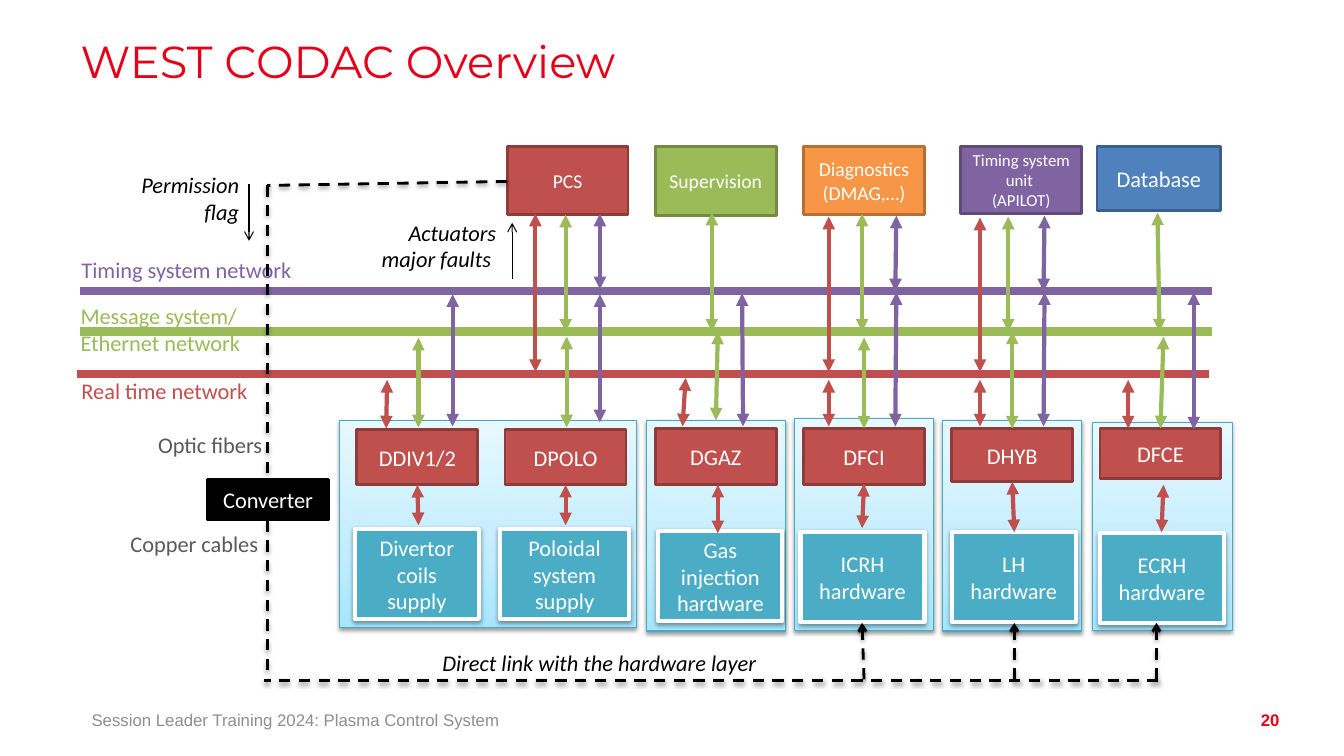
from copy import deepcopy

from pptx import Presentation
from pptx.dml.color import RGBColor
from pptx.enum.dml import MSO_LINE
from pptx.enum.shapes import MSO_CONNECTOR, MSO_SHAPE
from pptx.enum.text import MSO_ANCHOR, MSO_AUTO_SIZE, PP_ALIGN
from pptx.oxml import parse_xml
from pptx.oxml.ns import nsdecls, qn
from pptx.util import Inches, Pt

RECTANGLE, STRAIGHT = MSO_SHAPE.RECTANGLE, MSO_CONNECTOR.STRAIGHT
LEFT, CENTER, RIGHT, JUSTIFY = PP_ALIGN.LEFT, PP_ALIGN.CENTER, PP_ALIGN.RIGHT, PP_ALIGN.JUSTIFY
TOP, MIDDLE = MSO_ANCHOR.TOP, MSO_ANCHOR.MIDDLE
NO_FIT, DASH = MSO_AUTO_SIZE.NONE, MSO_LINE.DASH
TITLE_ONLY = 5

COLORS = {
    "title": "E50019", "footer": "8E8E8E", "medium": "595959",
    "black": "000000", "white": "FFFFFF",
    "realtime": "C0504D", "realtime_edge": "8E3B39",
    "message": "9BBB59", "message_edge": "738A42",
    "timing": "8064A2", "timing_edge": "5F4A78",
    "diagnostics": "F79646", "diagnostics_edge": "B76F34",
    "database": "4F81BD", "database_edge": "3A5F8C",
    "hardware": "4BACC6", "panel_edge": "46AAC5",
    "panel_low": "A7E6FF", "panel_mid": "C1EDFF", "panel_high": "E7F8FF",
}
PANEL_STOPS = [(0, "panel_low"), (0.35, "panel_mid"), (1, "panel_high")]

PANELS = [(6.41, 4.17, 1.38, 2.09), (10.84, 4.19, 1.38, 2.07), (9.35, 4.17, 1.38, 2.09),
          (7.88, 4.15, 1.38, 2.11), (3.37, 4.17, 2.94, 2.06)]
NETWORKS = [("message", 0.79, 3.29), ("realtime", 0.76, 3.71), ("timing", 0.79, 2.89)]
NETWORK_LABELS = [
    ("Message system/\nEthernet network", (0.7, 2.95, 1.95, 0.64), "message"),
    ("Timing system network", (0.71, 2.49, 3.4, 0.37), "timing"),
    ("Real time network", (0.71, 3.69, 1.95, 0.37), "realtime"),
]
CONTROLLERS = [("DDIV1/2", 3.54, 4.26, 0.55), ("DPOLO", 5.01, 4.26, 0.55),
               ("DGAZ", 6.5, 4.25, 0.56), ("DFCI", 7.97, 4.25, 0.56),
               ("DHYB", 9.44, 4.25, 0.53), ("DFCE", 10.91, 4.25, 0.5)]
SERVICES = [
    ("PCS", 5.03, 1.2, 0.68, "realtime", 14),
    ("Supervision", 6.5, 1.2, 0.69, "message", 14),
    ("Diagnostics\n(DMAG,…)", 7.97, 1.2, 0.68, "diagnostics", 14),
    ("Timing system unit \n(APILOT)", 9.53, 1.2, 0.67, "timing", 12),
    ("Database", 10.88, 1.23, 0.64, "database", 16),
]
HARDWARE = [
    ("Poloidal system supply", 4.96, 5.25, 1.28), ("Divertor coils supply", 3.52, 5.25, 1.23),
    ("ICRH\nhardware", 7.94, 5.28, 1.23), ("LH\nhardware", 9.44, 5.28, 1.23),
    ("Gas injection\nhardware", 6.53, 5.27, 1.23), ("ECRH\nhardware", 10.91, 5.29, 1.23),
]
# Each exchange: x at the bottom, bottom, top, and optional shift of x at the top.
EXCHANGES = {
    "timing": [
        (10.35, 2.89, 2.14, 0.01), (8.88, 2.89, 2.14, 0.01), (5.95, 2.87, 2.12),
        (11.84, 4.26, 2.9), (10.35, 4.23, 2.9, 0.01), (8.88, 4.23, 2.9, 0.01),
        (7.37, 4.23, 2.91, -0.01), (5.95, 4.19, 2.92), (4.49, 4.23, 2.92)],
    "message": [
        (7.06, 3.29, 2.11), (5.61, 3.29, 2.13), (8.55, 3.29, 2.12), (10, 3.29, 2.15),
        (11.5, 3.29, 2.11, -0.02), (11.51, 4.25, 3.34, 0.03), (10.04, 4.25, 3.29),
        (8.57, 4.25, 3.35), (7.1, 4.17, 3.29, 0.02), (5.62, 4.24, 3.34), (4.15, 4.24, 3.35)],
    "realtime": [
        (11.19, 4.25, 3.77), (9.72, 4.23, 3.77), (8.22, 4.23, 3.77),
        (6.77, 4.23, 3.75, 0.03), (3.83, 4.25, 3.77, 0.01),
        (5.31, 3.69, 2.12), (8.22, 3.69, 2.15), (9.72, 3.69, 2.16),
        (4.15, 5.21, 4.81, -0.01), (5.61, 5.21, 4.81), (8.55, 5.24, 4.8, 0.02),
        (10.06, 5.28, 4.78, -0.02), (7.12, 5.29, 4.81), (11.52, 5.28, 4.81, 0.02)],
}
DIRECT_LINKS = [((5.03, 1.8), (2.65, 1.84)), ((2.65, 1.84), (2.65, 6.74)),
                ((11.49, 6.75), (2.62, 6.75))]
HARDWARE_LINKS = [((8.57, 6.74), (8.55, 6.18)), ((10.06, 6.74), (10.06, 6.18)),
                  ((11.47, 6.74), (11.47, 6.18))]
SIGNALS = [((5.08, 2.77), (5.08, 2.21)), ((2.47, 1.83), (2.47, 2.39))]
NOTES = [
    ("Actuators major faults ", (3.47, 2.12, 1.55, 0.64), "black", RIGHT, True),
    ("Permission flag", (0.92, 1.65, 1.55, 0.64), "black", RIGHT, True),
    ("Direct link with the hardware layer", (4.29, 6.39, 3.5, 0.37), "black", JUSTIFY, True),
    ("Optic fibers", (1.15, 4.23, 1.55, 0.37), "medium", RIGHT, False),
    ("Copper cables", (1.11, 5.21, 1.55, 0.37), "medium", RIGHT, False),
]


def rgb(color):
    """Return the named colour."""
    return RGBColor.from_string(COLORS[color])


class DiagramSlide:
    """Hold the text style and the slide on which elements are drawn."""

    def __init__(self, deck, font="Calibri", size=16):
        self.slide = deck.slides.add_slide(deck.slide_layouts[TITLE_ONLY])
        self.shapes = self.slide.shapes
        self.style = {"name": font, "size": size, "bold": False, "italic": False}

    def set_text(self, frame, wording, color, align=LEFT, anchor=TOP, **changes):
        """Fill a text frame and format its runs."""
        frame.text = wording
        for key, value in {"word_wrap": True, "auto_size": NO_FIT, "vertical_anchor": anchor}.items():
            setattr(frame, key, value)
        style = {**self.style, **changes}
        style["size"] = Pt(style["size"])
        for paragraph in frame.paragraphs:
            paragraph.alignment = align
            for run in paragraph.runs:
                for key, value in style.items():
                    setattr(run.font, key, value)
                run.font.color.rgb = rgb(color)

    def title(self, wording, place):
        """Move and format the title placeholder."""
        heading = self.shapes.title
        for key, value in zip(("left", "top", "width", "height"), place):
            setattr(heading, key, Inches(value))
        self.set_text(heading.text_frame, wording, "title", name="Montserrat", size=32)
        heading.text_frame.margin_left = heading.text_frame.margin_right = 0
        heading.text_frame.paragraphs[0].line_spacing = 0.9

    def label(self, wording, place, color, **changes):
        """Add a text box."""
        box = self.shapes.add_textbox(*map(Inches, place))
        self.set_text(box.text_frame, wording, color, **changes)

    def cast_shadow(self, properties):
        """Put a soft shadow in the effect list."""
        properties.find(qn("a:effectLst")).append(parse_xml(
            f'<a:outerShdw {nsdecls("a")} blurRad="{Pt(3.1)}" dist="{Pt(1.6)}" dir="5400000" '
            'rotWithShape="0"><a:srgbClr val="000000"><a:alpha val="38000"/></a:srgbClr></a:outerShdw>'))

    def box(self, wording, place, fill, edge, width=2, shadow=False, size=16):
        """Add a rectangle with centred white text."""
        block = self.shapes.add_shape(RECTANGLE, *map(Inches, place))
        block.shadow.inherit = False
        block.line.color.rgb = rgb(edge)
        block.line.width = Pt(width)
        if fill:
            block.fill.solid()
            block.fill.fore_color.rgb = rgb(fill)
        if shadow:
            self.cast_shadow(block._element.spPr)
        if wording:
            self.set_text(block.text_frame, wording, "white", CENTER, MIDDLE, size=size)
        return block

    def panel(self, place):
        """Add a shaded rectangle behind a subsystem."""
        block = self.box("", place, None, "panel_edge", 0.75, shadow=True)
        block.fill.gradient()
        block.fill.gradient_angle = 90
        stops = block._element.spPr.find(".//" + qn("a:gsLst"))
        stops.insert(0, deepcopy(stops[0]))
        for stop, (position, color) in zip(block.fill.gradient_stops, PANEL_STOPS):
            stop.position = position
            stop.color.rgb = rgb(color)

    def line(self, start, end, color, width, head=None, tail=None, dashed=False):
        """Add a straight line; dashed ones cast a shadow."""
        link = self.shapes.add_connector(STRAIGHT, *map(Inches, (*start, *end)))
        link.line.color.rgb = rgb(color)
        link.line.width = Pt(width)
        properties = link._element.spPr
        properties.append(parse_xml(f'<a:effectLst {nsdecls("a")}/>'))
        if dashed:
            link.line.dash_style = DASH
            self.cast_shadow(properties)
        for end_name, kind in (("headEnd", head), ("tailEnd", tail)):
            if kind:
                properties.find(qn("a:ln")).append(
                    parse_xml(f'<a:{end_name} {nsdecls("a")} type="{kind}"/>'))

    def exchange(self, color, x, bottom, top, lean=0):
        """Add a two-way arrow."""
        self.line((x, bottom), (x + lean, top), color, 3, "triangle", "triangle")


def main():
    """Build the overview slide."""
    deck = Presentation()
    deck.slide_width, deck.slide_height = Inches(13.33), Inches(7.5)
    overview = DiagramSlide(deck)
    overview.title("WEST CODAC Overview", (0.8, 0.34, 11.73, 0.95))
    overview.label("Session Leader Training 2024: Plasma Control System", (0.81, 6.94, 9.67, 0.4),
                   "footer", anchor=MIDDLE, name="Arial", size=12)
    overview.label("20", (12.03, 6.94, 0.76, 0.4), "title", align=RIGHT, anchor=MIDDLE,
                   name="Arial", size=12, bold=True)
    for place in PANELS:
        overview.panel(place)
    for color, left, y in NETWORKS:
        overview.line((left, y), (left + 11.23, y), color, 6)
    for wording, place, color in NETWORK_LABELS:
        overview.label(wording, place, color)
    for wording, left, top, height in CONTROLLERS:
        overview.box(wording, (left, top, 1.2, height), "realtime", "realtime_edge")
    for wording, left, width, height, color, size in SERVICES:
        overview.box(wording, (left, 1.45, width, height), color, color + "_edge", size=size)
    for wording, left, top, width in HARDWARE:
        overview.box(wording, (left, top, width, 0.89), "hardware", "white", 3, shadow=True)
    for color, exchanges in EXCHANGES.items():
        for exchange in exchanges:
            overview.exchange(color, *exchange)
    for start, end in DIRECT_LINKS:
        overview.line(start, end, "black", 2, dashed=True)
    for start, end in HARDWARE_LINKS:
        overview.line(start, end, "black", 2, tail="arrow", dashed=True)
    for start, end in SIGNALS:
        overview.line(start, end, "black", 0.75, tail="arrow")
    overview.box("Converter", (2.06, 4.76, 1.2, 0.4), "black", "black")
    for wording, place, color, align, italic in NOTES:
        overview.label(wording, place, color, align=align, italic=italic)
    deck.save("out.pptx")


if __name__ == "__main__":
    main()
